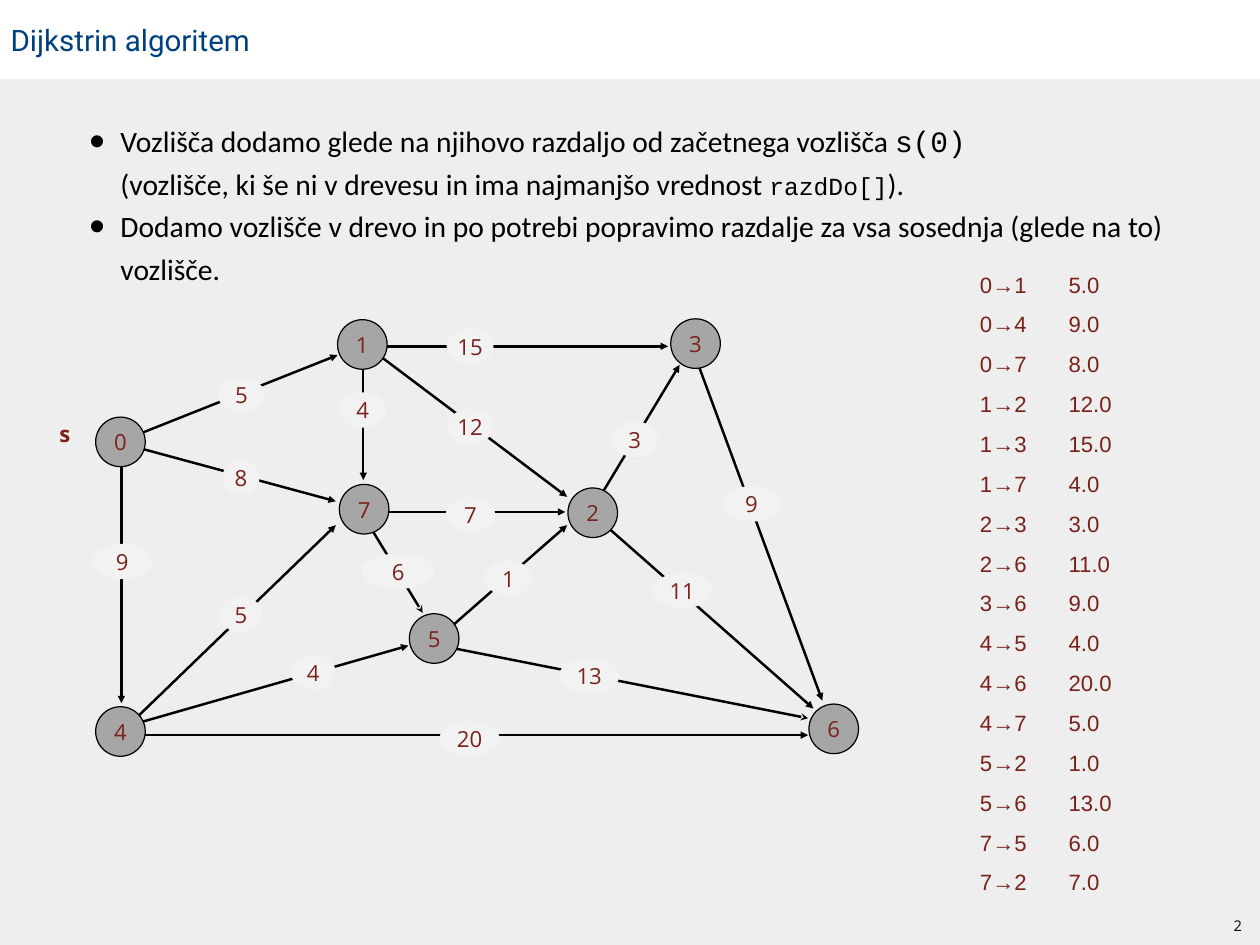
"""Builds a slide on Dijkstra's algorithm with a weighted directed graph."""
from dataclasses import dataclass
from typing import NamedTuple

from lxml import etree
from pptx import Presentation
from pptx import util as u
from pptx.dml.color import RGBColor
from pptx.enum import shapes, text
from pptx.oxml.ns import qn
from pptx.util import Inches


@dataclass(frozen=True)
class Theme:
    """Colours, fonts and type sizes of the slide."""
    background: str = "EEEEEE"
    band: str = "FFFFFF"
    title: str = "004080"
    ink: str = "000000"
    accent: str = "79211B"
    node: str = "A6A6A6"
    weight: str = "F2F2F2"
    title_font: str = "Roboto"
    body_font: str = "Calibri"
    code_font: str = "Courier New"
    graph_font: str = "Open Sans"
    list_font: str = "Arial"
    large: int = 24
    code: int = 20
    graph: int = 18
    small: int = 12


THEME = Theme()


class Edge(NamedTuple):
    """A directed edge: line ends, and left, top and width of its weight."""
    source: int
    target: int
    weight: int
    start: tuple
    end: tuple
    oval: tuple
    head: str = "triangle"


NODES = {
    0: (1.08, 4.71), 1: (3.81, 3.61), 2: (6.41, 5.51), 3: (7.57, 3.6),
    4: (1.08, 7.98), 5: (4.62, 6.93), 6: (9.13, 7.95), 7: (3.83, 5.47),
}
EDGES = [
    Edge(0, 1, 5, (1.42, 4.96), (3.81, 4.01), (2.46, 4.26, 0.53)),
    Edge(0, 4, 9, (1.37, 5.15), (1.37, 7.94), (1.04, 6.14, 0.68)),
    Edge(0, 7, 8, (1.39, 5.01), (3.79, 5.66), (2.51, 5.19, 0.42)),
    Edge(1, 2, 12, (4.17, 3.93), (6.4, 5.61), (5.04, 4.62, 0.53)),
    Edge(1, 3, 15, (4.08, 3.91), (7.54, 3.91), (5.04, 3.71, 0.53)),
    Edge(1, 7, 4, (4.1, 3.88), (4.1, 5.42), (3.83, 4.43, 0.53)),
    Edge(2, 3, 3, (6.62, 5.86), (7.67, 4.12), (6.9, 4.76, 0.53)),
    Edge(2, 6, 11, (6.83, 5.93), (9.18, 8), (7.36, 6.47, 0.68)),
    Edge(3, 6, 9, (7.83, 3.98), (9.28, 7.91), (8.14, 5.49, 0.68)),
    Edge(4, 5, 4, (1.36, 8.22), (4.61, 7.29), (3.28, 7.39, 0.51)),
    Edge(4, 6, 20, (1.36, 8.3), (9.12, 8.3), (4.96, 8.14, 0.68)),
    Edge(4, 7, 5, (1.41, 8.23), (3.79, 5.93), (2.47, 6.74, 0.5)),
    Edge(5, 2, 1, (4.94, 7.21), (6.4, 5.93), (5.47, 6.33, 0.54)),
    Edge(5, 6, 13, (5.02, 7.3), (9.12, 8.11), (6.31, 7.43, 0.68), "stealth"),
    Edge(7, 5, 6, (4.05, 5.74), (4.77, 6.92), (4.08, 6.25, 0.83), "stealth"),
    Edge(7, 2, 7, (4.05, 5.78), (6.38, 5.78), (5.03, 5.61, 0.56)),
]


def color(value):
    """Return the colour object for a hex value."""
    return RGBColor.from_string(value)


def write(paragraph, words, *, font=THEME.graph_font, size=THEME.graph,
          ink=THEME.accent, bold=False):
    """Add a formatted run to a paragraph."""
    run = paragraph.add_run()
    run.text = words
    run.font.name = font
    run.font.size = u.Pt(size)
    run.font.bold = bold
    run.font.color.rgb = color(ink)


def place(shape, left, top, width, height):
    """Move and size a shape, in inches."""
    shape.left, shape.top = Inches(left), Inches(top)
    shape.width, shape.height = Inches(width), Inches(height)


def set_frame(frame, margins=(0, 0, 0, 0), anchor=text.MSO_ANCHOR.TOP, wrap=True):
    """Set insets, anchor and wrapping of a text frame."""
    frame.margin_left, frame.margin_top, frame.margin_right, frame.margin_bottom = map(
        Inches, margins)
    frame.vertical_anchor = anchor
    frame.word_wrap = wrap
    frame.auto_size = text.MSO_AUTO_SIZE.NONE


def layout_paragraph(paragraph, margin, indent=0, spacing=1.0):
    """Set indents and line spacing, and return the paragraph properties."""
    paragraph.alignment = text.PP_ALIGN.LEFT
    paragraph.line_spacing = spacing
    paragraph.space_before = u.Pt(0)
    properties = paragraph._p.get_or_add_pPr()
    properties.set("marL", str(Inches(margin)))
    properties.set("indent", str(Inches(indent)))
    return properties


def add_title(slide):
    """Fill the title placeholder as a white band."""
    title = slide.shapes.title
    place(title, 0, 0, 14.22, 0.89)
    title.fill.solid()
    title.fill.fore_color.rgb = color(THEME.band)
    set_frame(title.text_frame, (0.06, 0.06, 0.18, 0.06), text.MSO_ANCHOR.MIDDLE)
    paragraph = title.text_frame.paragraphs[0]
    layout_paragraph(paragraph, 0.06)
    write(paragraph, "Dijkstrin algoritem", font=THEME.title_font,
          size=THEME.large, ink=THEME.title)


def add_bullet(paragraph):
    """Format a paragraph as a bulleted item."""
    properties = layout_paragraph(paragraph, 0.41, -0.35, 1.2)
    etree.SubElement(properties, qn("a:buSzPct"), val="150000")
    etree.SubElement(properties, qn("a:buFont"), typeface=THEME.list_font)
    etree.SubElement(properties, qn("a:buChar"), char="•")


def add_body(slide):
    """Fill the body placeholder with the two rules."""
    body = slide.placeholders[1]
    place(body, 0.89, 1.25, 12.44, 8.89)
    frame = body.text_frame
    set_frame(frame, (0.06, 0.06, 0.18, 0.06))
    prose = dict(font=THEME.body_font, size=THEME.large, ink=THEME.ink)
    code = dict(prose, font=THEME.code_font)
    first, second = frame.paragraphs[0], frame.add_paragraph()
    add_bullet(first)
    write(first, "Vozlišča dodamo glede na njihovo razdaljo od začetnega vozlišča ", **prose)
    write(first, "s(0)", **code)
    first.add_line_break()
    write(first, "(vozlišče, ki še ni v drevesu in ima najmanjšo vrednost ", **prose)
    write(first, "razdDo[]", **dict(code, size=THEME.code))
    write(first, ").", **prose)
    add_bullet(second)
    write(second, "Dodamo vozlišče v drevo in po potrebi popravimo razdalje "
          "za vsa sosednja (glede na to) vozlišče.", **prose)


def add_oval(slide, label, left, top, width, height, fill, outline=None):
    """Add a labelled ellipse."""
    oval = slide.shapes.add_shape(
        shapes.MSO_SHAPE.OVAL, *map(Inches, (left, top, width, height)))
    oval.shadow.inherit = False
    oval.fill.solid()
    oval.fill.fore_color.rgb = color(fill)
    if outline:
        oval.line.color.rgb = color(outline)
        oval.line.width = u.Pt(1)
    else:
        oval.line.fill.background()
    set_frame(oval.text_frame, anchor=text.MSO_ANCHOR.MIDDLE, wrap=False)
    paragraph = oval.text_frame.paragraphs[0]
    paragraph.alignment = text.PP_ALIGN.CENTER
    write(paragraph, str(label))


def add_arrow(slide, start, end, head):
    """Add a straight arrow between two points."""
    arrow = slide.shapes.add_connector(
        shapes.MSO_CONNECTOR.STRAIGHT, *map(Inches, start + end))
    arrow.line.color.rgb = color(THEME.ink)
    arrow.line.width = u.Pt(2)
    properties = arrow.element.spPr
    etree.SubElement(properties.find(qn("a:ln")), qn("a:tailEnd"), type=head)
    etree.SubElement(properties, qn("a:effectLst"))


def add_text_box(slide, left, top, width, height, anchor=text.MSO_ANCHOR.TOP):
    """Add a text box without insets and return its frame."""
    box = slide.shapes.add_textbox(*map(Inches, (left, top, width, height)))
    set_frame(box.text_frame, anchor=anchor)
    return box.text_frame


def add_graph(slide):
    """Draw the edges, then the nodes, then the weights."""
    for edge in EDGES:
        add_arrow(slide, edge.start, edge.end, edge.head)
    for name, (left, top) in NODES.items():
        add_oval(slide, name, left, top, 0.56, 0.56, THEME.node, THEME.ink)
    for edge in EDGES:
        add_oval(slide, edge.weight, *edge.oval, 0.4, THEME.weight)
    start = add_text_box(slide, 0.61, 4.75, 0.33, 0.4).paragraphs[0]
    layout_paragraph(start, 0.06)
    write(start, "s", bold=True)


def add_edge_list(slide):
    """List every edge with its weight centred on a tab stop."""
    frame = add_text_box(slide, 11.06, 2.91, 2, 7.27)
    for index, edge in enumerate(EDGES):
        paragraph = frame.add_paragraph() if index else frame.paragraphs[0]
        properties = layout_paragraph(paragraph, 0, spacing=1.5)
        stops = etree.SubElement(properties, qn("a:tabLst"))
        etree.SubElement(stops, qn("a:tab"), pos=str(Inches(0.9)), algn="ctr")
        write(paragraph, f"{edge.source}→{edge.target}\t{edge.weight:.1f}",
              font=THEME.list_font)


def add_slide_number(slide):
    """Add the slide number."""
    frame = add_text_box(slide, 13.8, 10.25, 0.34, 0.4, text.MSO_ANCHOR.MIDDLE)
    paragraph = frame.paragraphs[0]
    paragraph.alignment = text.PP_ALIGN.CENTER
    write(paragraph, "2", size=THEME.small, ink=THEME.ink)


def main():
    """Build and save the presentation."""
    presentation = Presentation()
    presentation.slide_width, presentation.slide_height = Inches(14.22), Inches(10.67)
    slide = presentation.slides.add_slide(presentation.slide_layouts[1])
    slide.background.fill.solid()
    slide.background.fill.fore_color.rgb = color(THEME.background)
    add_title(slide)
    add_body(slide)
    add_graph(slide)
    add_edge_list(slide)
    add_slide_number(slide)
    presentation.save("out.pptx")


if __name__ == "__main__":
    main()
